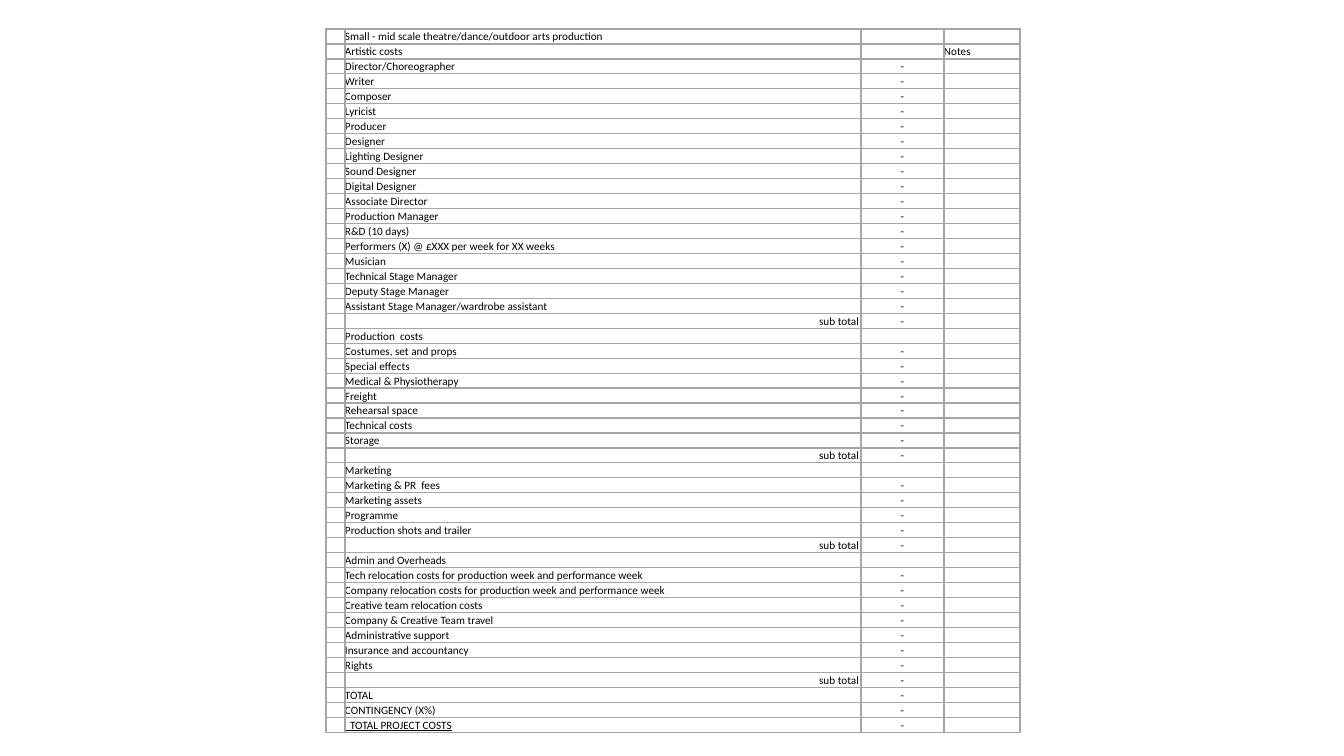
from pptx import Presentation
from pptx.dml.color import RGBColor as Rgb
from pptx.enum.text import MSO_ANCHOR as Anchor, PP_ALIGN as Align
from pptx.oxml import parse_xml
from pptx.oxml.ns import nsdecls
from pptx.util import Emu, Pt

COLS = [19, 516, 83, 76]
ROW = 15
TITLE = "Small - mid scale theatre/dance/outdoor arts production"
PARTS = {
    "Artistic costs": [
        "Director/Choreographer", "Writer", "Composer", "Lyricist", "Producer",
        "Designer", "Lighting Designer", "Sound Designer", "Digital Designer",
        "Associate Director", "Production Manager", "R&D (10 days)",
        "Performers (X) @ £XXX per week for XX weeks", "Musician",
        "Technical Stage Manager", "Deputy Stage Manager",
        "Assistant Stage Manager/wardrobe assistant"],
    "Production  costs": [
        "Costumes, set and props", "Special effects", "Medical & Physiotherapy",
        "Freight", "Rehearsal space", "Technical costs", "Storage"],
    "Marketing": [
        "Marketing & PR  fees", "Marketing assets", "Programme",
        "Production shots and trailer"],
    "Admin and Overheads": [
        "Tech relocation costs for production week and performance week",
        "Company relocation costs for production week and performance week",
        "Creative team relocation costs", "Company & Creative Team travel",
        "Administrative support", "Insurance and accountancy", "Rights"],
}
SUB = "sub total"
GRAND = "  TOTAL PROJECT COSTS"
TOTALS = ["TOTAL", "CONTINGENCY (X%)", GRAND]


def px(n):
    return Emu(round(n * 914400 / 100.8))


def color(code):
    return Rgb.from_string(code)


class Sheet:
    font, size, ink, rule = "Calibri", 8, "000000", "A5A5A5"

    def __init__(self, deck):
        self.slide = deck.slides.add_slide(deck.slide_layouts[6])

    def border(self, cell):
        props = cell._tc.get_or_add_tcPr()
        for i, side in enumerate(("lnL", "lnR", "lnT", "lnB")):
            props.insert(i, parse_xml(
                f'<a:{side} {nsdecls("a")} w="{Pt(1)}"><a:solidFill>'
                f'<a:srgbClr val="{self.rule}"/></a:solidFill></a:{side}>'))

    def cell(self, cell, text):
        cell.margin_left = cell.margin_top = cell.margin_bottom = 0
        cell.margin_right = px(2 if text == SUB else 0)
        cell.vertical_anchor = Anchor.BOTTOM
        cell.fill.background()
        self.border(cell)
        para = cell.text_frame.paragraphs[0]
        para.text = text
        para.alignment = {SUB: Align.RIGHT, "-": Align.CENTER}.get(text, Align.LEFT)
        font = para.font
        font.name, font.size = self.font, Pt(self.size)
        font.color.rgb = color(self.ink)
        font.underline = text == GRAND

    def table(self, x, y, cols, height, rows):
        frame = self.slide.shapes.add_table(
            len(rows), len(cols), px(x), px(y), px(sum(cols)), px(height * len(rows)))
        grid = frame.table
        grid.first_row = grid.horz_banding = False
        for col, wide in zip(grid.columns, cols):
            col.width = px(wide)
        for line, texts in zip(grid.rows, rows):
            line.height = px(height)
            for cell, text in zip(line.cells, texts):
                self.cell(cell, text)


def budget():
    # Headings have no amount; every other line has a dash
    rows = [["", TITLE, "", ""]]
    for head, items in PARTS.items():
        rows.append(["", head, "", "" if len(rows) > 1 else "Notes"])
        rows += [["", item, "-", ""] for item in items + [SUB]]
    return rows + [["", item, "-", ""] for item in TOTALS]


def main():
    deck = Presentation()
    deck.slide_width, deck.slide_height = px(1344), px(756)
    # Budget table
    Sheet(deck).table(326, 29, COLS, ROW, budget())
    deck.save("out.pptx")


if __name__ == "__main__":
    main()
